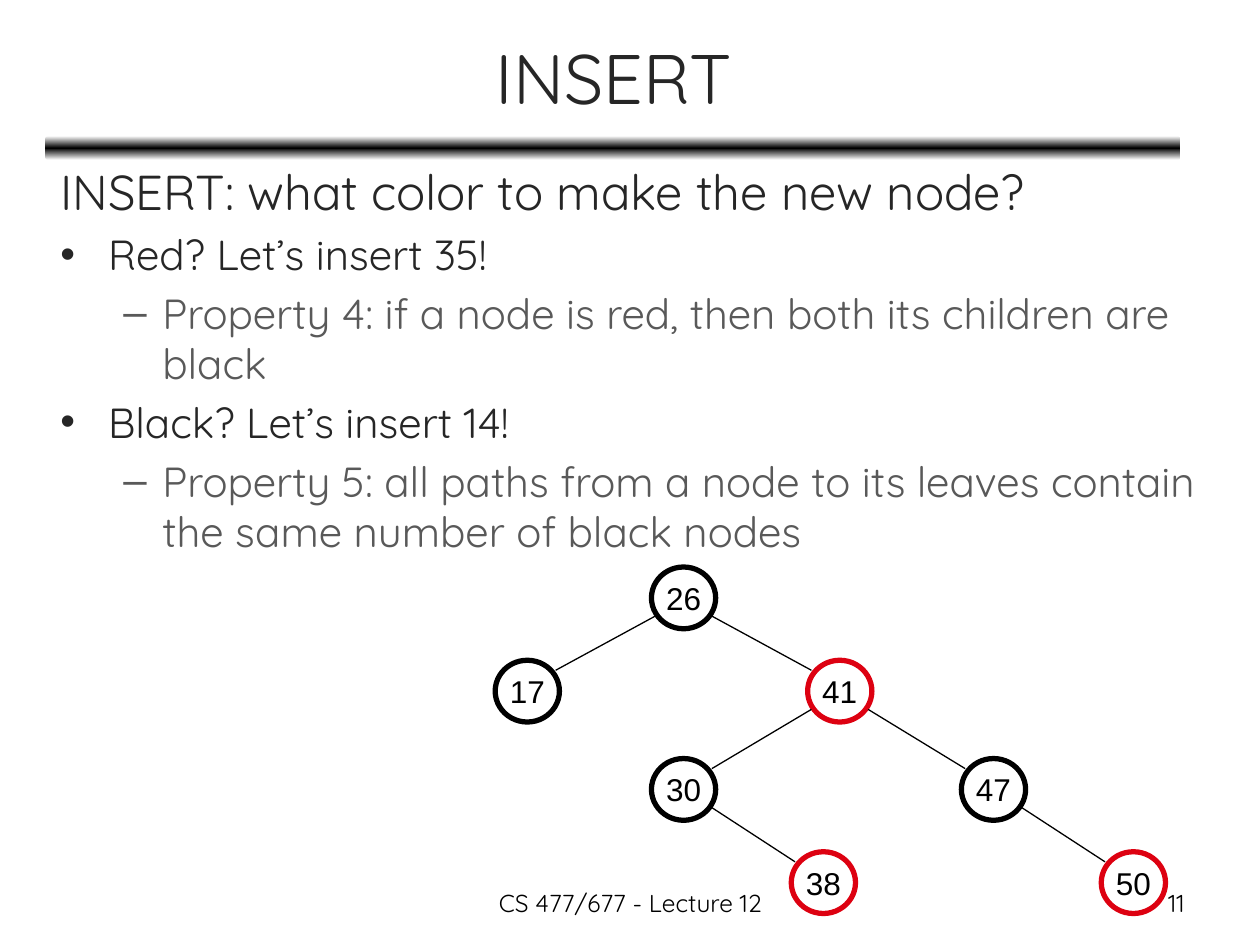
from copy import deepcopy
from dataclasses import dataclass
from lxml.etree import SubElement
from pptx import Presentation
from pptx.dml.color import RGBColor
from pptx.enum.shapes import MSO_CONNECTOR, MSO_SHAPE
from pptx.enum.text import MSO_ANCHOR, MSO_AUTO_SIZE, PP_ALIGN
from pptx.oxml.ns import qn
from pptx.util import Inches, Pt

HUES = {"black": "000000", "white": "FFFFFF", "red": "DD0111",
        "dark": "262626", "grey": "595959"}
FACE = "Quicksand"
WIDE, HIGH = 0.51, 0.49


@dataclass
class Node:
    key: str
    x: float
    y: float
    hue: str
    up: str = ""


@dataclass
class Point:
    text: str
    size: int
    hue: str
    left: float
    hang: float
    mark: str = ""


NODES = [
    Node("26", 5.17, 4.5, "black"),
    Node("17", 3.93, 5.24, "black", "26"),
    Node("41", 6.41, 5.24, "red", "26"),
    Node("30", 5.17, 6.02, "black", "41"),
    Node("47", 7.63, 6.02, "black", "41"),
    Node("38", 6.28, 6.76, "red", "30"),
    Node("50", 8.74, 6.76, "red", "47"),
]
POINTS = [
    Point("INSERT: what color to make the new node?", 28, "dark", 0.38, 0.38),
    Point("Red? Let’s insert 35!", 24, "dark", 0.38, 0.38, "•"),
    Point("Property 4: if a node is red, then both its children are black",
          24, "grey", 0.81, 0.31, "–"),
    Point("Black? Let’s insert 14!", 24, "dark", 0.38, 0.38, "•"),
    Point("Property 5: all paths from a node to its leaves contain "
          "the same number of black nodes", 24, "grey", 0.81, 0.31, "–"),
]


def tint(name: str) -> RGBColor:
    return RGBColor.from_string(HUES[name])


def write(para, text: str, size: int, hue: str = "black", face: str = FACE,
          align=PP_ALIGN.LEFT) -> None:
    para.alignment = align
    run = para.add_run()
    run.text = text
    for name, value in {"size": Pt(size), "name": face}.items():
        setattr(run.font, name, value)
    run.font.color.rgb = tint(hue)


def place(shape, x: float, y: float, w: float, h: float) -> None:
    box = {"left": x, "top": y, "width": w, "height": h}
    for name, value in box.items():
        setattr(shape, name, Inches(value))


def add_box(slide, x: float, y: float, w: float, h: float):
    box = slide.shapes.add_textbox(*map(Inches, (x, y, w, h)))
    box.text_frame.word_wrap = True
    return box.text_frame


def add_title(slide, text: str) -> None:
    title = slide.shapes.title
    place(title, 0.37, 0.11, 9, 0.99)
    frame = title.text_frame
    look = {"auto_size": MSO_AUTO_SIZE.NONE, "word_wrap": True,
            "vertical_anchor": MSO_ANCHOR.MIDDLE}
    for name, value in look.items():
        setattr(frame, name, value)
    write(frame.paragraphs[0], text, 40, "dark", align=PP_ALIGN.CENTER)


def add_rule(slide) -> None:
    """Draw the bar under the title, fading from black to white both ways."""
    bar = slide.shapes.add_shape(MSO_SHAPE.ROUNDED_RECTANGLE,
                                 *map(Inches, (0.36, 1.08, 9.01, 0.19)))
    bar.shadow.inherit = False
    bar.line.fill.background()
    bar.fill.gradient()
    bar.fill.gradient_angle = 90
    stops = bar._element.spPr.find(".//" + qn("a:gsLst"))
    stops.insert(1, deepcopy(stops[0]))
    fade = [(0, "white"), (0.5, "black"), (1, "white")]
    for stop, (spot, hue) in zip(bar.fill.gradient_stops, fade):
        stop.position = spot
        stop.color.rgb = tint(hue)


def add_points(slide, points: list[Point]) -> None:
    frame = add_box(slide, 0.38, 1.23, 9.39, 4.6)
    for i, point in enumerate(points):
        para = frame.add_paragraph() if i else frame.paragraphs[0]
        para.space_before = Pt(point.size * 0.2)
        write(para, point.text, point.size, point.hue)
        props = para._p.get_or_add_pPr()
        props.set("marL", str(Inches(point.left)))
        props.set("indent", str(-Inches(point.hang)))
        if point.mark:
            SubElement(props, qn("a:buFont")).set("typeface", "Arial")
            SubElement(props, qn("a:buChar")).set("char", point.mark)
        else:
            SubElement(props, qn("a:buNone"))


def add_node(slide, node: Node) -> None:
    ring = slide.shapes.add_shape(
        MSO_SHAPE.OVAL, *map(Inches, (node.x, node.y, WIDE, HIGH)))
    ring.shadow.inherit = False
    ring.fill.background()
    ring.line.color.rgb = tint(node.hue)
    ring.line.width = Pt(3)
    frame = ring.text_frame
    frame.word_wrap = False
    frame.vertical_anchor = MSO_ANCHOR.MIDDLE
    write(frame.paragraphs[0], node.key, 18, face="Arial",
          align=PP_ALIGN.CENTER)


def add_edge(slide, top: Node, low: Node) -> None:
    """Join the lower side of a parent to the upper side of its child."""
    near, far = 0.03, WIDE - 0.03
    out, back = (near, far) if low.x < top.x else (far, near)
    ends = (top.x + out, top.y + 0.39, low.x + back, low.y + 0.08)
    line = slide.shapes.add_connector(MSO_CONNECTOR.STRAIGHT,
                                      *map(Inches, ends))
    line.line.color.rgb = tint("black")
    line.line.width = Pt(0.75)
    SubElement(line._element.spPr, qn("a:effectLst"))


def main() -> None:
    deck = Presentation()
    deck.slide_width, deck.slide_height = Inches(10), Inches(7.5)
    slide = deck.slides.add_slide(deck.slide_layouts[5])
    add_rule(slide)
    add_title(slide, "INSERT")
    add_points(slide, POINTS)
    tree = {node.key: node for node in NODES}
    for node in NODES:
        add_node(slide, node)
    for node in NODES:
        if node.up:
            add_edge(slide, tree[node.up], node)
    for text, x, w, align in [
            ("11", 7.17, 2.33, PP_ALIGN.RIGHT),
            ("CS 477/677 - Lecture 12", 3.42, 3.17, PP_ALIGN.CENTER)]:
        foot = add_box(slide, x, 7, w, 0.35)
        write(foot.paragraphs[0], text, 14, align=align)
    deck.save("out.pptx")


if __name__ == "__main__":
    main()
